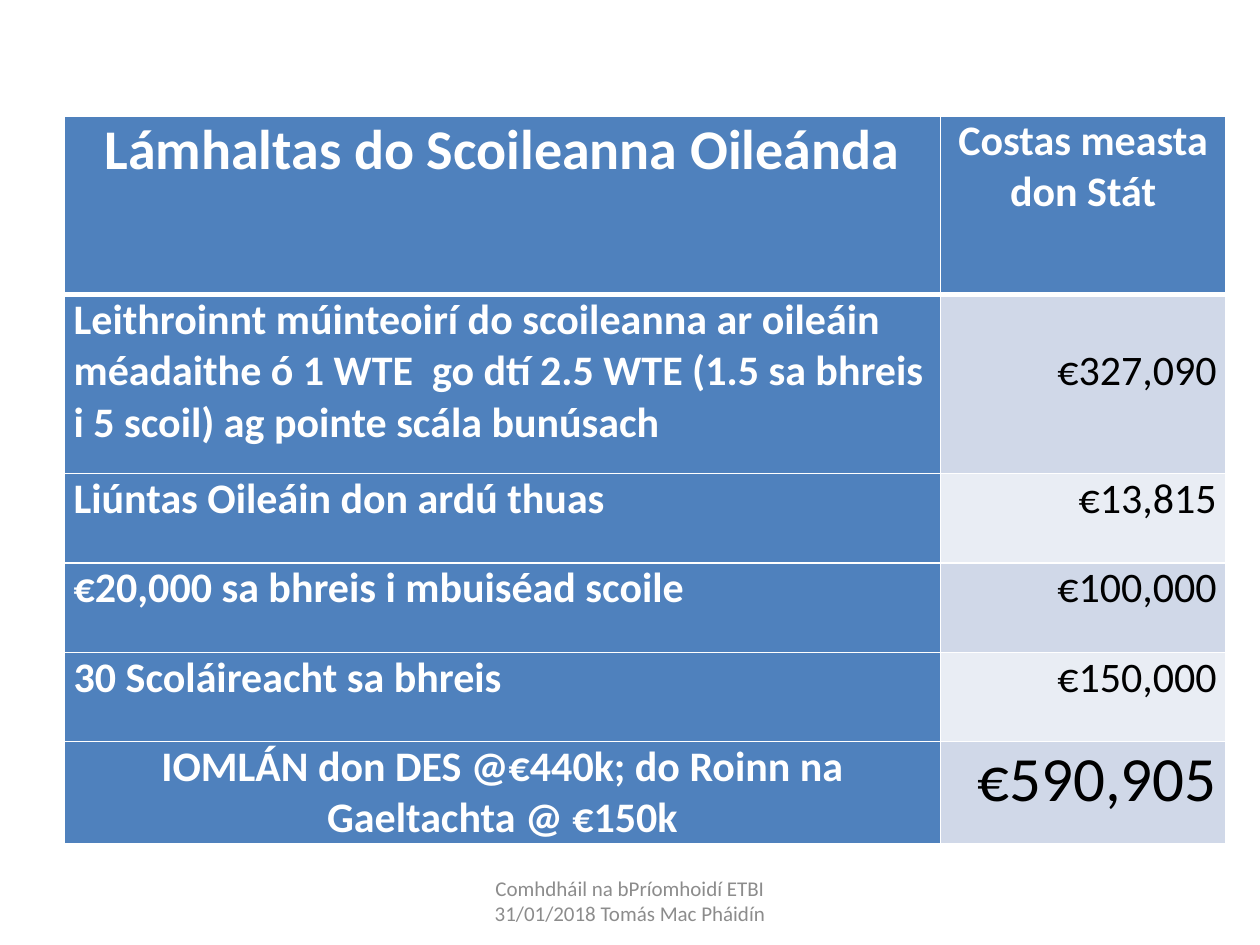
from pptx import Presentation
from pptx.dml.color import RGBColor
from pptx.enum.text import MSO_ANCHOR, PP_ALIGN
from pptx.oxml import parse_xml
from pptx.oxml.ns import nsdecls
from pptx.util import Pt

LEFT, CENTER, RIGHT = PP_ALIGN.LEFT, PP_ALIGN.CENTER, PP_ALIGN.RIGHT
TOP, MIDDLE = MSO_ANCHOR.TOP, MSO_ANCHOR.MIDDLE

COLORS = {
    "header": "4F81BD",
    "band_dark": "D0D8E8",
    "band_light": "E9EDF4",
    "white": "FFFFFF",
    "black": "000000",
    "footer": "8C8C8C",
}
FONT = "Calibri"
COL_WIDTHS = [500.4, 163.2]
ROW_HEIGHTS = [102.2, 102.2, 51.1, 51.1, 51.1, 51.1]

# Label, label format, cost, cost format
HEADING = {"bold": True, "color": "white", "align": CENTER}
LABEL = {"bold": True, "color": "white", "align": LEFT}
COST = {"bold": False, "color": "black", "align": RIGHT}
ROWS = [
    ("Lámhaltas do Scoileanna Oileánda", {**HEADING, "size": 32},
     "Costas measta\ndon Stát", HEADING),
    ("Leithroinnt múinteoirí do scoileanna ar oileáin méadaithe ó 1 WTE  go dtí "
     "2.5 WTE (1.5 sa bhreis i 5 scoil) ag pointe scála bunúsach", LABEL,
     "€327,090", {**COST, "margin_top": 29.3}),
    ("Liúntas Oileáin don ardú thuas", LABEL, "€13,815", COST),
    ("€20,000 sa bhreis i mbuiséad scoile", LABEL, "€100,000", COST),
    ("30 Scoláireacht sa bhreis", LABEL, "€150,000", COST),
    ("IOMLÁN don DES @€440k; do Roinn na Gaeltachta @ €150k", HEADING,
     "€590,905", {**COST, "size": 36}),
]


def rgb(name):
    return RGBColor.from_string(COLORS[name])


def write_text(tf, text, align, color, size=24, bold=False):
    tf.word_wrap = True
    for i, line in enumerate(text.split("\n")):
        p = tf.paragraphs[0] if i == 0 else tf.add_paragraph()
        p.alignment = align
        r = p.add_run()
        r.text = line
        font_format = {"name": FONT, "size": Pt(size), "bold": bold}
        for name, value in font_format.items():
            setattr(r.font, name, value)
        r.font.color.rgb = rgb(color)


def set_borders(cell, widths):
    tc_pr = cell._tc.get_or_add_tcPr()
    for i, (side, width) in enumerate(widths.items()):
        tc_pr.insert(i, parse_xml(
            f'<a:{side} {nsdecls("a")} w="{Pt(width)}"><a:solidFill>'
            f'<a:srgbClr val="{COLORS["white"]}"/></a:solidFill></a:{side}>'))


def fill_cell(cell, text, fill, borders, margin_top=0, **text_format):
    cell_format = {
        "margin_left": Pt(5.2), "margin_right": Pt(5.2),
        "margin_top": Pt(margin_top), "margin_bottom": Pt(0),
        "vertical_anchor": TOP,
    }
    for name, value in cell_format.items():
        setattr(cell, name, value)
    cell.fill.solid()
    cell.fill.fore_color.rgb = rgb(fill)
    write_text(cell.text_frame, text, **text_format)
    set_borders(cell, borders)


def add_cost_table(s):
    table = s.shapes.add_table(
        len(ROWS), len(COL_WIDTHS), Pt(36.9), Pt(66.2),
        Pt(sum(COL_WIDTHS)), Pt(sum(ROW_HEIGHTS))).table
    for column, width in zip(table.columns, COL_WIDTHS):
        column.width = Pt(width)
    for row, height in zip(table.rows, ROW_HEIGHTS):
        row.height = Pt(height)

    for i, (label, label_format, cost, cost_format) in enumerate(ROWS):
        # A thick rule separates the heading row from the body
        borders = {"lnL": 1, "lnR": 1,
                   "lnT": 3 if i == 1 else 1, "lnB": 3 if i == 0 else 1}
        band = "band_dark" if i % 2 else "band_light"
        fill_cell(table.cell(i, 0), label, "header", borders, **label_format)
        fill_cell(table.cell(i, 1), cost, band if i else "header",
                  borders, **cost_format)


def add_footer(s, text):
    sp = s.shapes.add_textbox(Pt(246), Pt(500.5), Pt(228), Pt(28.75))
    sp.text_frame.vertical_anchor = MIDDLE
    write_text(sp.text_frame, text, CENTER, "footer", size=12)


def main():
    prs = Presentation()
    prs.slide_width, prs.slide_height = Pt(720), Pt(540)
    s = prs.slides.add_slide(prs.slide_layouts[6])

    # Cost table
    add_cost_table(s)

    # Footer
    add_footer(s, "Comhdháil na bPríomhoidí ETBI 31/01/2018 Tomás Mac Pháidín")

    prs.save("out.pptx")


if __name__ == "__main__":
    main()
